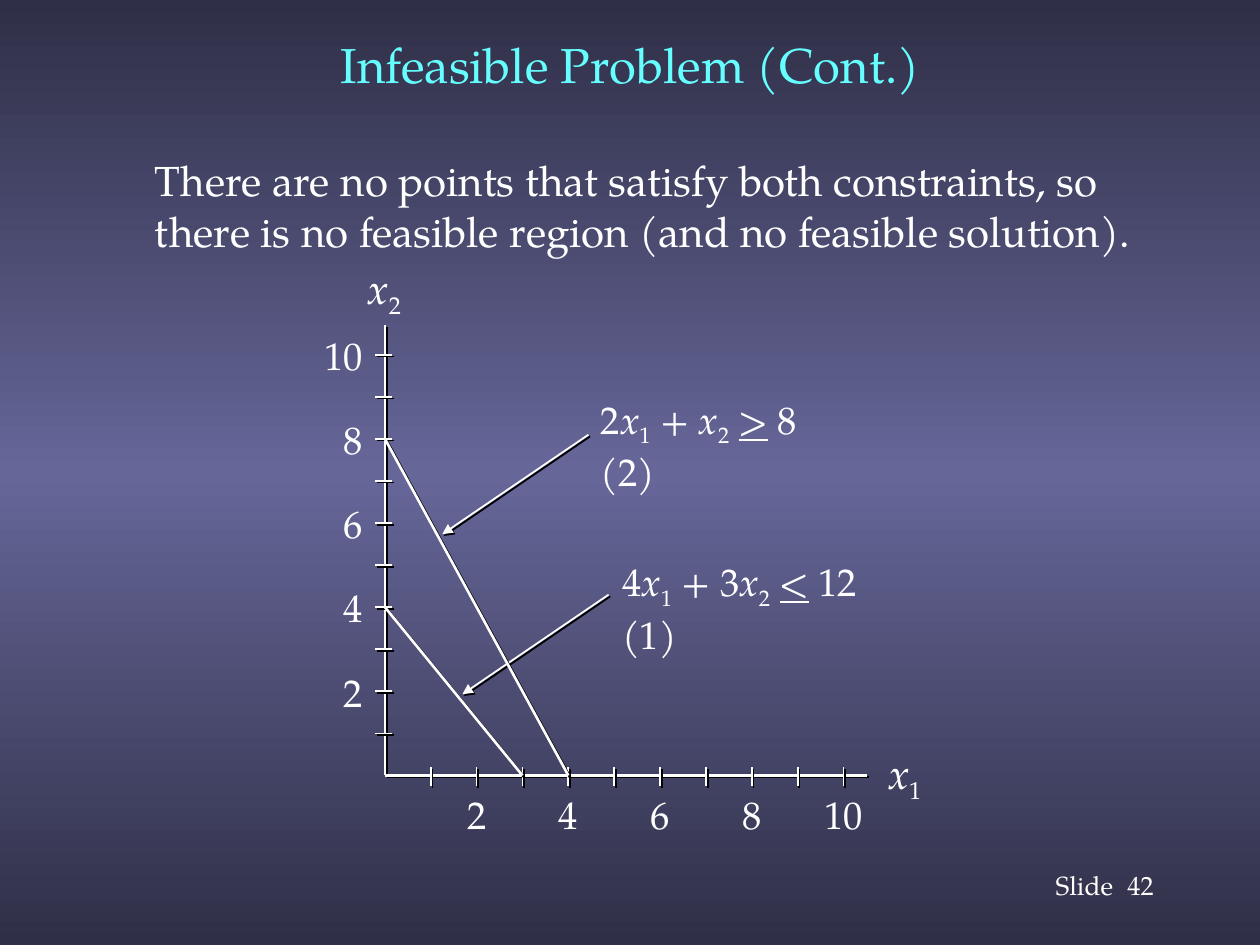
from copy import deepcopy

from pptx import Presentation
from pptx.dml.color import RGBColor
from pptx.enum.shapes import MSO_CONNECTOR
from pptx.enum.text import MSO_ANCHOR, PP_ALIGN
from pptx.oxml import parse_xml
from pptx.oxml.ns import nsdecls, qn
from pptx.util import Inches, Pt

COLS, ROWS = 100, 75
CELL = Inches(0.1)
WHITE, CYAN, NAVY, VIOLET = "FFFFFF", "66FFFF", "2F2F47", "666699"
FONT = "TeX Gyre Pagella"
ORIGIN_X, ORIGIN_Y = 30.55, 61.55
STEP_X, STEP_Y = 3.64, 3.34
STYLES = {"": {}, "i": {"italic": True}, "sub": {}, "u": {"underline": True}}


def rgb(value):
    """Turn a hex string into a colour."""
    return RGBColor.from_string(value)


def grid(*cells):
    """Turn grid cells into lengths."""
    return [round(n * CELL) for n in cells]


def axis_point(x1, x2):
    """Turn graph coordinates into grid cells."""
    return ORIGIN_X + x1 * STEP_X, ORIGIN_Y - x2 * STEP_Y


def set_all(obj, values):
    """Set attributes from a dict of format values."""
    for name, value in values.items():
        setattr(obj, name, value)


def paint_background(s):
    """Fill the slide with a vertical dark-light-dark gradient."""
    fill = s.background.fill
    fill.gradient()
    fill.gradient_angle = 90
    stops = s._element.find(".//" + qn("a:gsLst"))
    stops.append(deepcopy(stops[0]))
    for stop, place, colour in zip(fill.gradient_stops, (0, 0.5, 1), (NAVY, VIOLET, NAVY)):
        stop.position = place
        stop.color.rgb = rgb(colour)


def add_runs(p, runs, size, colour=WHITE):
    """Add styled runs to a paragraph, with None as a line break."""
    for run in runs:
        if run is None:
            p.add_line_break()
            continue
        text, style = run
        r = p.add_run()
        r.text = text
        set_all(r.font, {"name": FONT, "size": Pt(size), **STYLES[style]})
        r.font.color.rgb = rgb(colour)
        if style == "sub":
            r._r.get_or_add_rPr().set("baseline", "-25000")


def format_frame(tf, side, anchor=MSO_ANCHOR.TOP):
    """Set wrapping, anchor and margins of a text frame."""
    across, down = grid(side, side / 2)
    set_all(tf, {"word_wrap": True, "vertical_anchor": anchor,
                 "margin_left": across, "margin_right": across,
                 "margin_top": down, "margin_bottom": down})


def add_label(s, box, runs, size=22, side=1, align=PP_ALIGN.LEFT):
    """Add a text box of one paragraph."""
    tf = s.shapes.add_textbox(*grid(*box)).text_frame
    format_frame(tf, side)
    p = tf.paragraphs[0]
    p.alignment = align
    add_runs(p, runs, size)


def fill_placeholder(sp, box, text, size, colour, anchor, para):
    """Move a placeholder and give it one formatted paragraph."""
    set_all(sp, dict(zip(("left", "top", "width", "height"), grid(*box))))
    format_frame(sp.text_frame, 1, anchor)
    p = sp.text_frame.paragraphs[0]
    set_all(p, para)
    add_runs(p, [(text, "")], size, colour)
    return p


def add_line(s, start, end, width=1.5, arrow=False):
    """Add a white line with a hard black shadow."""
    c = s.shapes.add_connector(MSO_CONNECTOR.STRAIGHT, *grid(*start, *end))
    c.line.color.rgb = rgb(WHITE)
    c.line.width = Pt(width)
    props = c._element.spPr
    if arrow:
        props.find(qn("a:ln")).append(parse_xml(f'<a:tailEnd {nsdecls("a")} type="triangle"/>'))
    props.append(parse_xml(
        f'<a:effectLst {nsdecls("a")}><a:outerShdw dist="17780" dir="2700000">'
        '<a:srgbClr val="000000"/></a:outerShdw></a:effectLst>'))


def add_axes(s):
    """Draw both axes with ticks, numbers and names."""
    add_line(s, (ORIGIN_X, 25.8), (ORIGIN_X, ORIGIN_Y))
    add_line(s, (ORIGIN_X, ORIGIN_Y), (68.8, ORIGIN_Y))
    for n in range(1, 11):
        x, y = axis_point(n, n)
        add_line(s, (x, 60.9), (x, 62.4), 1)
        add_line(s, (29.8, y), (31.1, y), 1)
        if n % 2 == 0:
            add_label(s, (x - 3, 62.3, 6, 4.6), [(str(n), "")], align=PP_ALIGN.CENTER)
            if n < 10:
                add_label(s, (23.8, y - 2.3, 6, 4.6), [(str(n), "")], align=PP_ALIGN.RIGHT)
            else:
                add_label(s, (23.8, y - 2.3, 6, 4.6), [(str(n), "")], align=PP_ALIGN.RIGHT)
    for number, left, top in (("2", 27.8, 20.1), ("1", 69.1, 58.6)):
        add_label(s, (left, top, 7, 5.4), [("x", "i"), (number, "sub")], 24, 1.4)


def add_constraint(s, intercepts, box, arrow, terms, sign, limit, number):
    """Draw a constraint line, its formula and the arrow between them."""
    x1, x2 = intercepts
    add_line(s, axis_point(0, x2), axis_point(x1, 0))
    add_line(s, *arrow, 1, arrow=True)
    first, second = terms
    runs = [(first, ""), ("x", "i"), ("1", "sub"), (second, ""), ("x", "i"), ("2", "sub"),
            (" ", ""), (sign, "u"), (f" {limit}", ""), None, (f"({number})", "")]
    add_label(s, box, runs, side=1.4)


def main():
    """Build the slide and save it."""
    prs = Presentation()
    prs.slide_width, prs.slide_height = grid(COLS, ROWS)
    s = prs.slides.add_slide(prs.slide_layouts[1])
    paint_background(s)
    fill_placeholder(s.shapes.title, (7.5, 0.6, 85, 8.9), "Infeasible Problem (Cont.)",
                     28, CYAN, MSO_ANCHOR.MIDDLE, {"alignment": PP_ALIGN.CENTER})
    p = fill_placeholder(
        s.placeholders[1], (7.5, 11.8, 86.2, 9.1),
        "There are no points that satisfy both constraints, so there is no feasible region "
        "(and no feasible solution).",
        24, WHITE, MSO_ANCHOR.TOP, {"space_before": Pt(4.8)})
    props = p._p.get_or_add_pPr()
    props.set("marL", str(Inches(0.38)))
    props.set("indent", "0")
    props.append(parse_xml(f'<a:buNone {nsdecls("a")}/>'))
    add_axes(s)
    add_constraint(s, (3, 4), (48, 43.6, 28.5, 9), ((48.3, 47.2), (36.7, 55.1)),
                   ("4", " + 3"), "<", 12, 1)
    add_constraint(s, (4, 8), (46.3, 30.7, 25.4, 9), ((46.7, 34.5), (35.1, 42.4)),
                   ("2", " + "), ">", 8, 2)
    for text, left in (("Slide", 82.8), ("42", 88.5)):
        add_label(s, (left, 68.5, 8, 3.6), [(text, "")], 15)
    prs.save("out.pptx")


if __name__ == "__main__":
    main()
